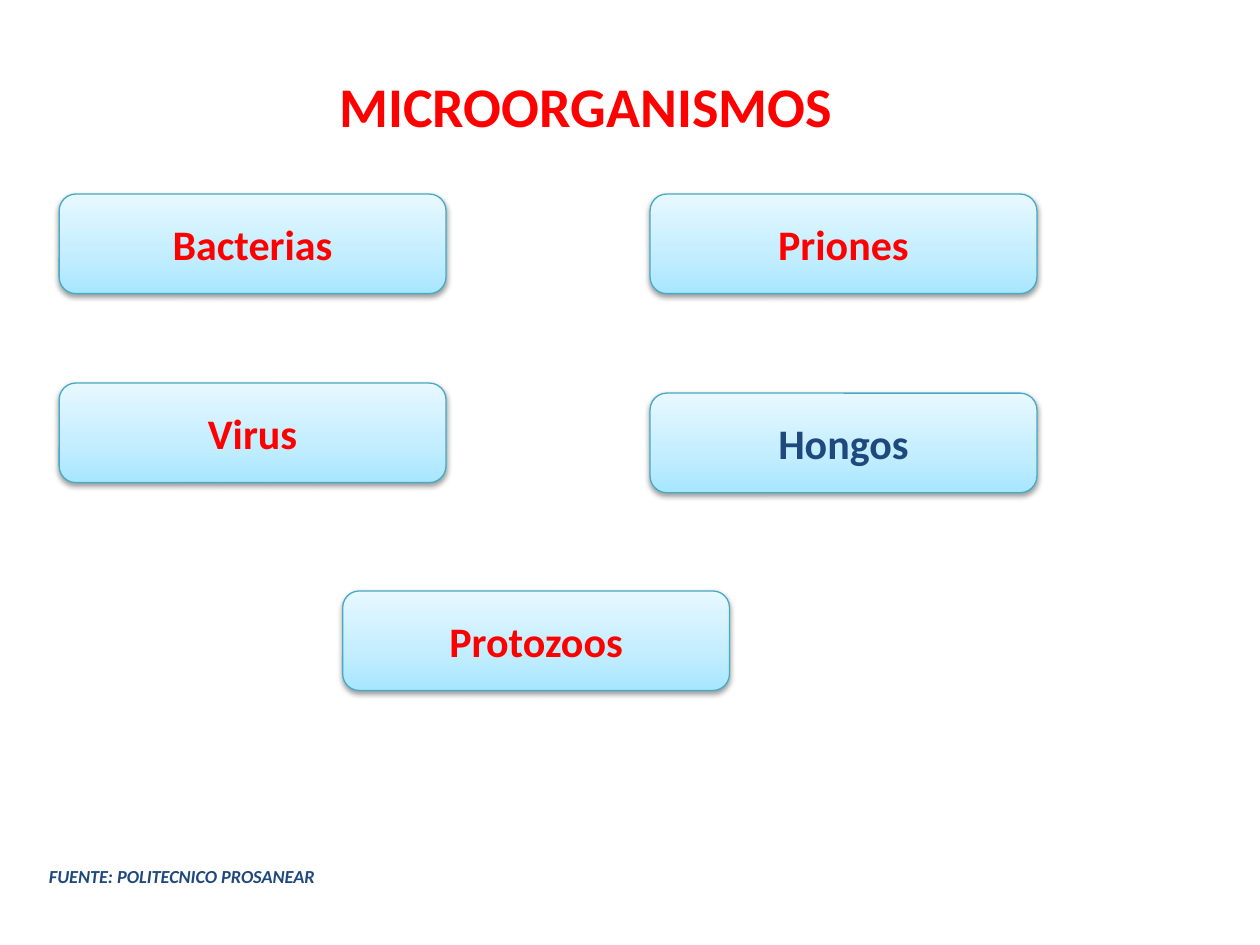
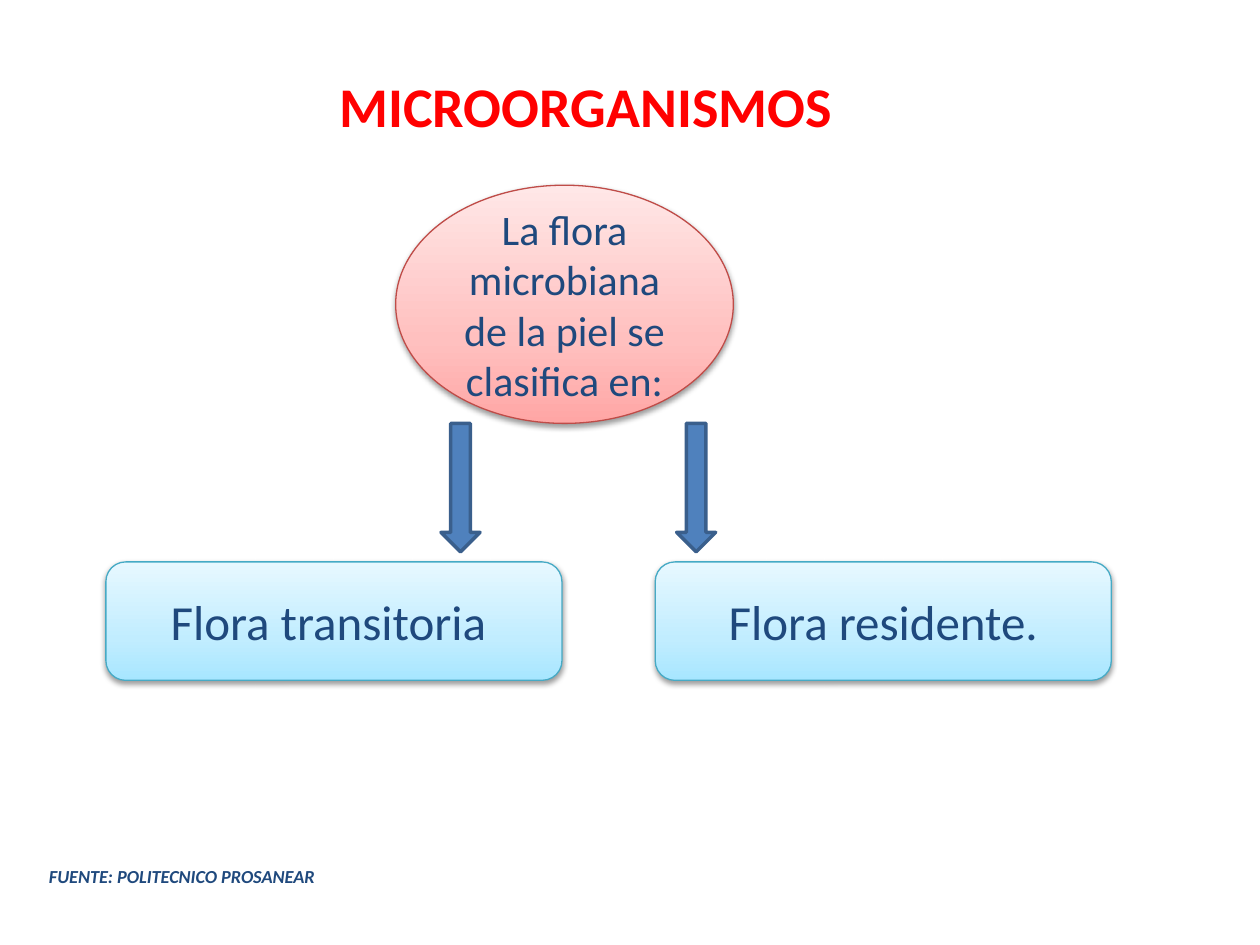
"""Build two slides on microorganisms and the flora of the skin."""
from copy import deepcopy

from lxml import etree
from pptx import Presentation
from pptx.dml.color import RGBColor
from pptx.enum.shapes import MSO_SHAPE
from pptx.enum.text import MSO_ANCHOR, MSO_AUTO_SIZE, PP_ALIGN
from pptx.oxml.ns import qn
from pptx.util import Inches, Pt

ROUND, OVAL, DOWN = MSO_SHAPE.ROUNDED_RECTANGLE, MSO_SHAPE.OVAL, MSO_SHAPE.DOWN_ARROW
LEFT, CENTER = PP_ALIGN.LEFT, PP_ALIGN.CENTER
TOP, MIDDLE = MSO_ANCHOR.TOP, MSO_ANCHOR.MIDDLE
GROW = MSO_AUTO_SIZE.SHAPE_TO_FIT_TEXT

COLORS = {
    "red": "FF0000", "navy": "1F497D", "blue": "4F81BD", "edge": "3A5F8C",
    "aqua": "46AAC5", "aqua0": "A7E6FF", "aqua1": "C1EDFF", "aqua2": "E7F8FF",
    "rose": "BF4C48", "rose0": "FFA6A5", "rose1": "FFC0BF", "rose2": "FFE7E7",
}
STOPS = (0, 0.35, 1)


def color(name):
    """Return the named colour."""
    return RGBColor.from_string(COLORS[name])


class Deck:
    """Hold the shared style and the current slide."""

    def __init__(self):
        """Start an empty deck."""
        self.prs = Presentation()
        self.prs.slide_width, self.prs.slide_height = Inches(10), Inches(7.5)
        self.slide = None

    def page(self):
        """Add a slide with its title and source line."""
        self.slide = self.prs.slides.add_slide(self.prs.slide_layouts[6])
        self.label((0.67, 0.21, 7.96, 1.25), "MICROORGANISMOS", "red", CENTER, MIDDLE,
                   size=Pt(32), bold=True)
        note = self.label((0.29, 6.82, 8.33, 0.28), "FUENTE: POLITECNICO PROSANEAR",
                          "navy", LEFT, TOP, size=Pt(10.5), bold=True, italic=True)
        note.text_frame.auto_size = GROW

    def words(self, shape, text, tint, align, anchor, **style):
        """Put styled text in a shape."""
        frame = shape.text_frame
        frame.word_wrap, frame.vertical_anchor = True, anchor
        line = frame.paragraphs[0]
        line.alignment = align
        run = line.add_run()
        run.text = text
        for key, value in {"name": "Calibri", **style}.items():
            setattr(run.font, key, value)
        run.font.color.rgb = color(tint)

    def label(self, box, text, tint, align, anchor, **style):
        """Add a text box."""
        shape = self.slide.shapes.add_textbox(*map(Inches, box))
        self.words(shape, text, tint, align, anchor, **style)
        return shape

    def shape(self, kind, box, edge, width):
        """Add an outlined shape without shadow."""
        shape = self.slide.shapes.add_shape(kind, *map(Inches, box))
        shape.shadow.inherit = False
        shape.line.color.rgb, shape.line.width = color(edge), Pt(width)
        return shape

    def card(self, kind, box, hue, text, tint, **style):
        """Add a shaded shape with centred text."""
        shape = self.shape(kind, box, hue, 0.75)
        self.shade(shape, hue)
        self.cast(shape)
        self.words(shape, text, tint, CENTER, MIDDLE, **style)

    def shade(self, shape, hue):
        """Fill a shape with an upward gradient."""
        fill = shape.fill
        fill.gradient()
        fill.gradient_angle = 90
        stops = shape.element.spPr.find(qn("a:gradFill")).find(qn("a:gsLst"))
        stops.append(deepcopy(stops[-1]))
        for i, (stop, place) in enumerate(zip(fill.gradient_stops, STOPS)):
            stop.position, stop.color.rgb = place, color(f"{hue}{i}")

    def cast(self, shape):
        """Give a shape a soft shadow below."""
        root = shape.element.spPr.find(qn("a:effectLst"))
        shadow = etree.SubElement(root, qn("a:outerShdw"), blurRad="40000", dist="20000",
                                  dir="5400000", rotWithShape="0")
        black = etree.SubElement(shadow, qn("a:srgbClr"), val="000000")
        etree.SubElement(black, qn("a:alpha"), val="38000")

    def arrow(self, box):
        """Add a solid down arrow."""
        shape = self.shape(DOWN, box, "edge", 2)
        shape.fill.solid()
        shape.fill.fore_color.rgb = color("blue")


def main():
    """Build and save the deck."""
    deck = Deck()
    deck.page()
    for x, y, text, tint in (
        (0.47, 1.54, "Bacterias", "red"),
        (0.47, 3.04, "Virus", "red"),
        (5.16, 3.12, "Hongos", "navy"),
        (2.72, 4.69, "Protozoos", "red"),
        (5.16, 1.54, "Priones", "red"),
    ):
        deck.card(ROUND, (x, y, 3.07, 0.79), "aqua", text, tint, size=Pt(24), bold=True)

    deck.page()
    deck.card(OVAL, (3.14, 1.47, 2.68, 1.89), "rose",
              "La flora microbiana de la piel se clasifica en:", "navy", size=Pt(24))
    for x, text in ((0.84, "Flora transitoria "), (5.2, "Flora residente.")):
        deck.card(ROUND, (x, 4.46, 3.62, 0.94), "aqua", text, "navy", size=Pt(28))
    for x in (3.5, 5.37):
        deck.arrow((x, 3.36, 0.31, 1.02))
    deck.prs.save("out.pptx")


if __name__ == "__main__":
    main()
